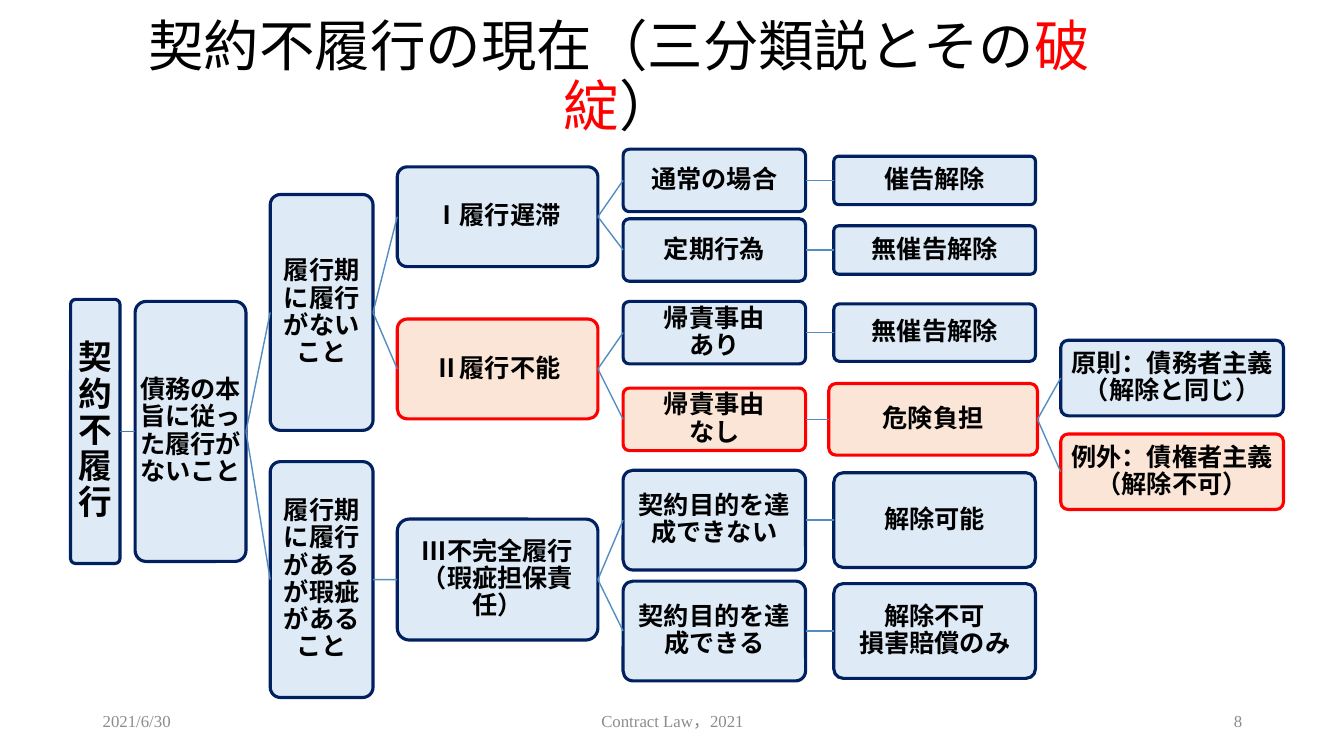
from dataclasses import dataclass

from lxml.etree import SubElement
from pptx import Presentation
from pptx.dml.color import RGBColor
from pptx.enum.shapes import MSO_CONNECTOR, MSO_SHAPE
from pptx.enum.text import MSO_ANCHOR, MSO_AUTO_SIZE, PP_ALIGN
from pptx.oxml.ns import qn
from pptx.util import Inches, Pt

BLACK = RGBColor(0x00, 0x00, 0x00)
GREY = RGBColor(0x8C, 0x8C, 0x8C)
RED = RGBColor(0xFF, 0x00, 0x00)
NAVY = RGBColor(0x00, 0x20, 0x60)
PALE_BLUE = RGBColor(0xDE, 0xEB, 0xF7)
PALE_RED = RGBColor(0xFB, 0xE5, 0xD6)
TRUNK_BLUE = RGBColor(0x49, 0x7C, 0xAB)
BRANCH_BLUE = RGBColor(0x53, 0x8D, 0xC1)

LATIN, JAPANESE = "Times New Roman", "Noto Sans CJK JP"
LEFT, RIGHT = 1, 3  # connection sites of a rectangle

# The slide is a grid of 133.3 columns by 75 rows
COLUMNS, ROWS = 133.3, 75

# Left column and width of each level of the tree
LEVELS = {
    "breach": (7, 4.9),
    "meaning": (13.4, 11),
    "timing": (26.8, 10.2),
    "kind": (39.4, 19.9),
    "case": (61.8, 18.1),
    "effect": (82.7, 20),
    "risk": (82.2, 20.7),
    "rule": (105.2, 22.1),
}


@dataclass
class Node:
    level: str
    text: str
    middle: float
    height: float
    children: tuple = ()
    alert: bool = False


class SlideWriter:
    def __init__(self, deck):
        self.width, self.height = deck.slide_width, deck.slide_height
        self.page = deck.slides.add_slide(deck.slide_layouts[6])

    def place(self, left, top, width, height):
        column, row = self.width / COLUMNS, self.height / ROWS
        return [int(value) for value in
                (left * column, top * row, width * column, height * row)]

    def set_frame(self, box, margin):
        frame = box.text_frame
        values = {"word_wrap": True, "auto_size": MSO_AUTO_SIZE.NONE,
                  "vertical_anchor": MSO_ANCHOR.MIDDLE}
        for side in ("left", "right", "top", "bottom"):
            values[f"margin_{side}"] = Inches(margin)
        for name, value in values.items():
            setattr(frame, name, value)
        return frame.paragraphs[0]

    def set_font(self, span, color, **values):
        for name, value in values.items():
            setattr(span.font, name, value)
        span.font.color.rgb = color
        SubElement(span.font._element, qn("a:ea"), typeface=JAPANESE)

    def label(self, place, parts, align, spacing=1.0, **font):
        box = self.page.shapes.add_textbox(*self.place(*place))
        para = self.set_frame(box, 0.1)
        para.alignment, para.line_spacing = align, spacing
        for text, color in parts:
            span = para.add_run()
            span.text = text
            self.set_font(span, color, **font)

    def node_box(self, node):
        left, width = LEVELS[node.level]
        place = self.place(left, node.middle - node.height / 2, width, node.height)
        box = self.page.shapes.add_shape(MSO_SHAPE.ROUNDED_RECTANGLE, *place)
        box.shadow.inherit = False
        box.adjustments[0] = 0.1
        box.fill.solid()
        box.fill.fore_color.rgb = PALE_RED if node.alert else PALE_BLUE
        box.line.color.rgb = RED if node.alert else NAVY
        box.line.width = Pt(2.25)
        para = self.set_frame(box, 0.01)
        para.alignment, para.line_spacing = PP_ALIGN.CENTER, 0.9
        para.text = node.text
        size = Pt(24 if node.level == "breach" else 18)
        for span in para.runs:
            self.set_font(span, BLACK, name=LATIN, size=size, bold=True)
        return box

    def link(self, start, end, color):
        line = self.page.shapes.add_connector(MSO_CONNECTOR.STRAIGHT, 0, 0, 0, 0)
        line.begin_connect(start, RIGHT)
        line.end_connect(end, LEFT)
        line.line.color.rgb = color
        line.line.width = Pt(1)
        SubElement(line._element.spPr, qn("a:effectLst"))

    def tree(self, node):
        box = self.node_box(node)
        color = TRUNK_BLUE if node.level == "breach" else BRANCH_BLUE
        for child in node.children:
            self.link(box, self.tree(child), color)
        return box


def breach_tree():
    # Delay
    delay = Node("kind", "Ⅰ履行遅滞", 21.5, 9.9, (
        Node("case", "通常の場合", 17.9, 6.2,
             (Node("effect", "催告解除", 17.9, 4.8),)),
        Node("case", "定期行為", 24.8, 6.2,
             (Node("effect", "無催告解除", 24.8, 4.8),)),
    ))
    # Impossibility
    rules = (
        Node("rule", "原則：債務者主義（解除と同じ）", 37.5, 7.5),
        Node("rule", "例外：債権者主義（解除不可）", 46.8, 7.5, alert=True),
    )
    impossible = Node("kind", "Ⅱ履行不能", 36.6, 9.9, (
        Node("case", "帰責事由\nあり", 33, 6.2,
             (Node("effect", "無催告解除", 33, 5.7),)),
        Node("case", "帰責事由\nなし", 41.6, 6.2,
             (Node("risk", "危険負担", 41.6, 7.1, rules, True),), True),
    ), True)
    # Incomplete performance
    incomplete = Node("kind", "Ⅲ不完全履行\n（瑕疵担保責任）", 57.5, 12, (
        Node("case", "契約目的を達成できない", 51.6, 9.9,
             (Node("effect", "解除可能", 51.6, 9.4),)),
        Node("case", "契約目的を達成できる", 62.6, 9.9,
             (Node("effect", "解除不可\n損害賠償のみ", 62.6, 9.4),)),
    ))
    # Trunk
    meaning = Node("meaning", "債務の本旨に従った履行がないこと", 42.8, 25.8, (
        Node("timing", "履行期に履行がないこと", 31, 23.4, (delay, impossible)),
        Node("timing", "履行期に履行があるが瑕疵があること", 57.5, 23.4, (incomplete,)),
    ))
    return Node("breach", "契約不履行", 42.8, 26.2, (meaning,))


def main():
    deck = Presentation()
    deck.slide_width, deck.slide_height = Inches(13.33), Inches(7.5)
    writer = SlideWriter(deck)

    # Title
    title = [("契約不履行の現在（三分類説とその", BLACK), ("破綻", RED), ("）", BLACK)]
    writer.label((9.2, 4, 104.4, 7.5), title, PP_ALIGN.CENTER, 0.9,
                 name=JAPANESE, size=Pt(39.6))

    # Classification tree
    writer.tree(breach_tree())

    # Footer
    for left, width, text, align in (
        (9.2, 30, "2021/6/30", PP_ALIGN.LEFT),
        (44.2, 45, "Contract Law，2021", PP_ALIGN.CENTER),
        (94.2, 30, "8", PP_ALIGN.RIGHT),
    ):
        writer.label((left, 69.5, width, 4), [(text, GREY)], align,
                     name=LATIN, size=Pt(12))

    deck.save("out.pptx")


if __name__ == "__main__":
    main()
